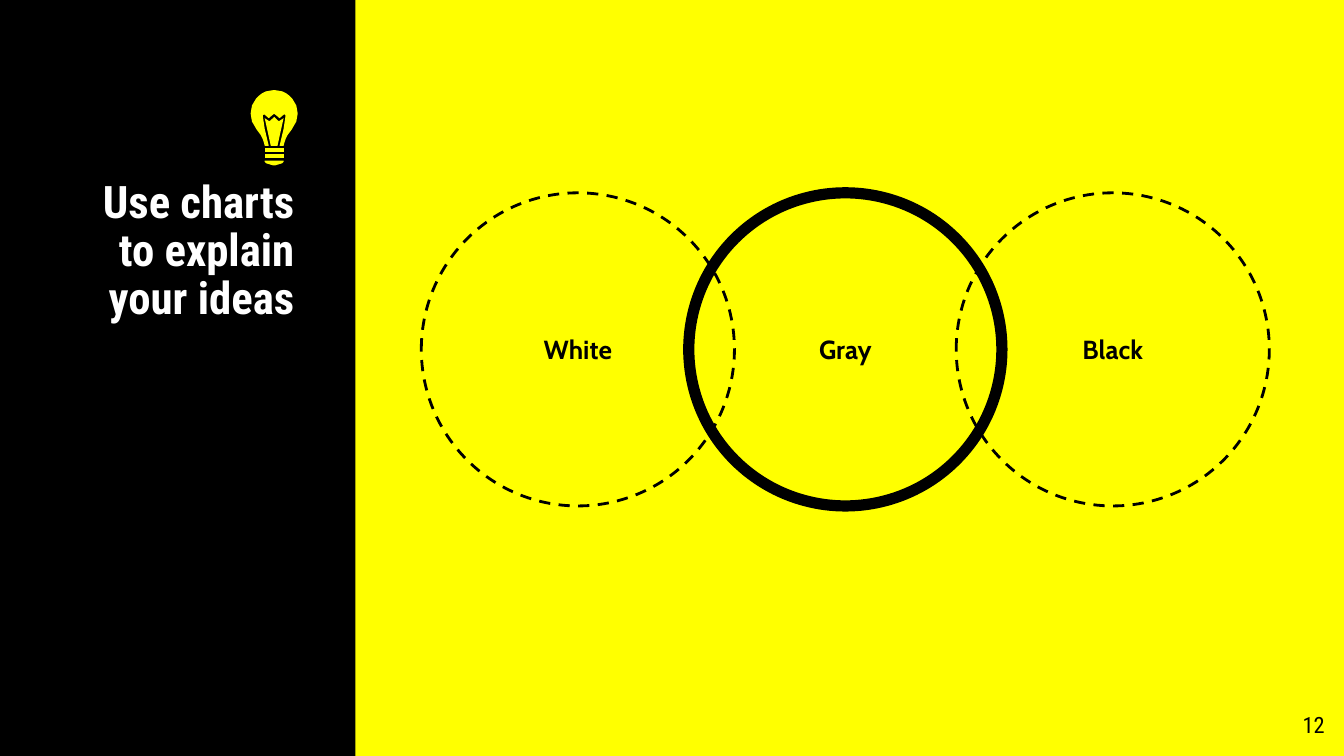
import math

from pptx import Presentation, util as u
from pptx.dml.color import RGBColor
from pptx.enum import dml, shapes, text

PX = 4572  # EMU per px, 200 px to the inch
THEME = {
    "black": RGBColor(0, 0, 0),
    "white": RGBColor(255, 255, 255),
    "yellow": RGBColor(255, 255, 0),
    "heading": "Roboto Condensed",
    "body": "Cabin",
    "title_size": u.Pt(24),
    "label_size": u.Pt(14),
    "number_size": u.Pt(12),
}


def paint(shape, fill=None, line=None):
    shape.shadow.inherit = False
    for part, color in ((shape.fill, fill), (shape.line.fill, line)):
        if color is None:
            part.background()
        else:
            part.solid()
            part.fore_color.rgb = THEME[color]


def write(shape, words, font, size, color, bold, align, anchor):
    box = shape.text_frame
    settings = {"word_wrap": True, "auto_size": text.MSO_AUTO_SIZE.NONE,
                "vertical_anchor": anchor}
    for side in ("left", "top", "right", "bottom"):
        settings["margin_" + side] = 20 * PX
    for name, value in settings.items():
        setattr(box, name, value)
    para = box.paragraphs[0]
    para.alignment = align
    span = para.add_run()
    span.text = words
    for name, value in {"name": THEME[font], "size": THEME[size], "bold": bold}.items():
        setattr(span.font, name, value)
    span.font.color.rgb = THEME[color]
    return para


deck = Presentation()
deck.slide_width, deck.slide_height = 2000 * PX, 1125 * PX
page = deck.slides.add_slide(deck.slide_layouts[5])
page.background.fill.solid()
page.background.fill.fore_color.rgb = THEME["yellow"]

# Side panel, placed behind the title
panel = page.shapes.add_shape(shapes.MSO_SHAPE.RECTANGLE, 0, 0, 529 * PX, deck.slide_height)
paint(panel, fill="black")
title = page.shapes.title
panel._element.addnext(title._element)

# Title
for name, value in {"left": 87, "top": 247, "width": 371, "height": 324}.items():
    setattr(title, name, value * PX)
para = write(title, "Use charts to explain your ideas", "heading", "title_size", "white",
             True, text.PP_ALIGN.RIGHT, text.MSO_ANCHOR.TOP)
para.line_spacing = 0.9

# Three overlapping circles, the heavy middle one at the back
FIRST, PITCH, TOP, SIZE = 627, 398, 287, 466
for column, label, weight, dash in (
    (1, "Gray", 6, dml.MSO_LINE.SOLID),
    (0, "White", 1.5, dml.MSO_LINE.DASH),
    (2, "Black", 1.5, dml.MSO_LINE.DASH),
):
    circle = page.shapes.add_shape(shapes.MSO_SHAPE.OVAL, (FIRST + column * PITCH) * PX,
                                   TOP * PX, SIZE * PX, SIZE * PX)
    paint(circle, line="black")
    circle.line.width = u.Pt(weight)
    circle.line.dash_style = dash
    write(circle, label, "body", "label_size", "black", True,
          text.PP_ALIGN.CENTER, text.MSO_ANCHOR.MIDDLE)

# Light bulb: left half of each part, mirrored about its axis
AXIS, CENTER, RADIUS = 408, 169, 35
dome = [(round(AXIS - RADIUS * math.sin(math.radians(angle))),
         round(CENTER - RADIUS * math.cos(math.radians(angle))))
        for angle in range(0, 121, 10)]
BULB = {
    "lower ring": [(394, 229), (394, 235)],
    "upper ring": [(394, 220), (394, 226)],
    "tip": [(394, 239), (394, 241), (396, 243), (406, 246)],
    "filament": [(408, 174), (402, 180), (400, 180), (394, 176), (403, 217)],
    "glass": dome + [(382, 193), (388, 201), (391, 207), (393, 213), (394, 217),
                     (400, 217), (394, 192), (391, 172), (393, 170), (400, 176),
                     (407, 170)],
}
bulb = page.shapes.add_group_shape()
for half in BULB.values():
    outline = half + [(2 * AXIS - x, y) for x, y in reversed(half)]
    builder = bulb.shapes.build_freeform(*outline[0], scale=PX)
    builder.add_line_segments(outline[1:], close=True)
    paint(builder.convert_to_shape(), fill="yellow")

# Page number
number = page.shapes.add_textbox(1871 * PX, 1039 * PX, 120 * PX, 86 * PX)
write(number, "12", "heading", "number_size", "black", False,
      text.PP_ALIGN.RIGHT, text.MSO_ANCHOR.TOP)

deck.save("out.pptx")
